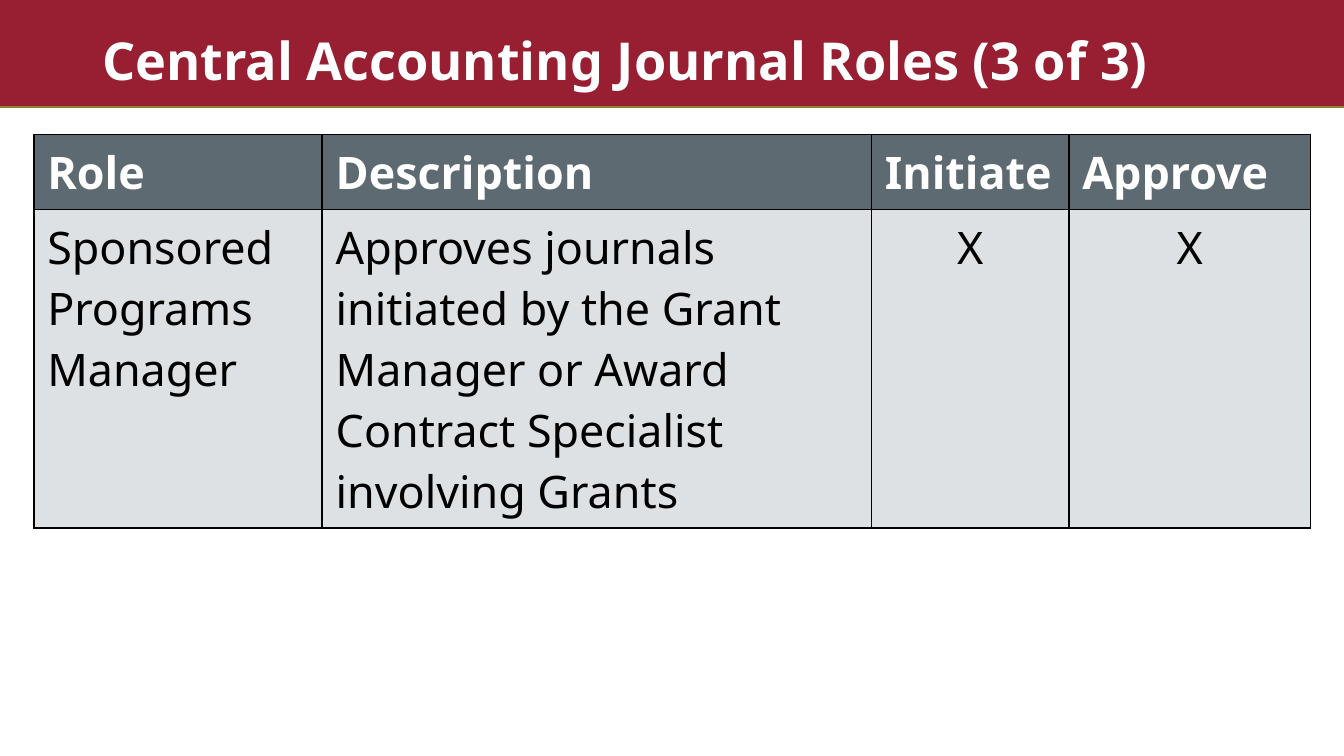
"""Build the slide of central accounting journal roles."""
from dataclasses import dataclass

from lxml import etree
from pptx import Presentation
from pptx.dml.color import RGBColor
from pptx.enum.shapes import MSO_CONNECTOR, MSO_SHAPE
from pptx.enum.text import MSO_ANCHOR, MSO_AUTO_SIZE, PP_ALIGN
from pptx.oxml.ns import qn
from pptx.slide import Slide
from pptx.table import _Cell
from pptx.text.text import _Paragraph
from pptx.util import Cm, Pt

RECTANGLE = MSO_SHAPE.RECTANGLE
STRAIGHT = MSO_CONNECTOR.STRAIGHT
BOTTOM = MSO_ANCHOR.BOTTOM
GROW = MSO_AUTO_SIZE.SHAPE_TO_FIT_TEXT
LEFT, CENTER = PP_ALIGN.LEFT, PP_ALIGN.CENTER


@dataclass(frozen=True)
class Theme:
    font: str = "Noto Sans"
    title_size: float = 28
    table_size: float = 24
    line_width: float = 1
    banner: str = "981E32"
    rule: str = "8F7E35"
    header: str = "5E6A71"
    body: str = "DEE1E3"
    light: str = "FFFFFF"
    dark: str = "000000"


@dataclass(frozen=True)
class Column:
    heading: str
    value: str
    width: float
    alignment: PP_ALIGN = LEFT


THEME = Theme()
SLIDE_WIDTH, SLIDE_HEIGHT = 25.4, 14.29
BANNER_HEIGHT = 2.03
HEADER_HEIGHT, BODY_HEIGHT = 1.42, 6.02
COLUMNS = (
    Column("Role", "Sponsored Programs Manager", 5.45),
    Column(
        "Description",
        "Approves journals initiated by the Grant Manager or Award Contract Specialist involving Grants",
        10.38,
    ),
    Column("Initiate", "X", 3.73, CENTER),
    Column("Approve", "X", 4.57, CENTER),
)


def format_paragraph(paragraph: _Paragraph, size: float, color: str, bold: bool) -> None:
    for run in paragraph.runs:
        run.font.name = THEME.font
        run.font.size = Pt(size)
        run.font.bold = bold
        run.font.color.rgb = RGBColor.from_string(color)


def draw_banner(slide: Slide) -> None:
    banner = slide.shapes.add_shape(RECTANGLE, 0, 0, Cm(SLIDE_WIDTH), Cm(BANNER_HEIGHT))
    banner.shadow.inherit = False
    banner.fill.solid()
    banner.fill.fore_color.rgb = RGBColor.from_string(THEME.banner)
    banner.line.fill.background()

    rule = slide.shapes.add_connector(
        STRAIGHT, 0, Cm(BANNER_HEIGHT), Cm(SLIDE_WIDTH), Cm(BANNER_HEIGHT)
    )
    rule.line.color.rgb = RGBColor.from_string(THEME.rule)
    rule.line.width = Pt(THEME.line_width)
    etree.SubElement(rule._element.spPr, qn("a:effectLst"))


def draw_title(slide: Slide, text: str) -> None:
    title = slide.shapes.add_textbox(Cm(0.66), Cm(0.52), Cm(24.56), Cm(1.35))
    text_frame = title.text_frame
    text_frame.word_wrap = True
    text_frame.auto_size = GROW
    text_frame.vertical_anchor = BOTTOM
    text_frame.margin_left = text_frame.margin_right = Cm(1.27)
    text_frame.text = text
    paragraph = text_frame.paragraphs[0]
    paragraph.line_spacing = 0.9
    format_paragraph(paragraph, THEME.title_size, THEME.light, True)


def add_borders(cell: _Cell) -> None:
    properties = cell._tc.get_or_add_tcPr()
    for side in ("lnL", "lnR", "lnT", "lnB"):
        border = etree.SubElement(properties, qn(f"a:{side}"), w=str(Pt(THEME.line_width)))
        fill = etree.SubElement(border, qn("a:solidFill"))
        etree.SubElement(fill, qn("a:srgbClr"), val=THEME.dark)


def fill_cell(
    cell: _Cell, text: str, fill: str, color: str, bold: bool, alignment: PP_ALIGN
) -> None:
    add_borders(cell)
    cell.fill.solid()
    cell.fill.fore_color.rgb = RGBColor.from_string(fill)
    cell.text_frame.text = text
    paragraph = cell.text_frame.paragraphs[0]
    paragraph.alignment = alignment
    format_paragraph(paragraph, THEME.table_size, color, bold)


def draw_table(slide: Slide, columns: tuple[Column, ...]) -> None:
    width = sum(column.width for column in columns)
    table = slide.shapes.add_table(
        2, len(columns), Cm(0.64), Cm(2.54), Cm(width), Cm(HEADER_HEIGHT + BODY_HEIGHT)
    ).table
    table.rows[0].height = Cm(HEADER_HEIGHT)
    table.rows[1].height = Cm(BODY_HEIGHT)
    for index, column in enumerate(columns):
        table.columns[index].width = Cm(column.width)
        fill_cell(table.cell(0, index), column.heading, THEME.header, THEME.light, True, LEFT)
        fill_cell(
            table.cell(1, index), column.value, THEME.body, THEME.dark, False, column.alignment
        )


def main() -> None:
    presentation = Presentation()
    presentation.slide_width = Cm(SLIDE_WIDTH)
    presentation.slide_height = Cm(SLIDE_HEIGHT)
    slide = presentation.slides.add_slide(presentation.slide_layouts[6])
    draw_banner(slide)
    draw_title(slide, "Central Accounting Journal Roles (3 of 3)")
    draw_table(slide, COLUMNS)
    presentation.save("out.pptx")


if __name__ == "__main__":
    main()
